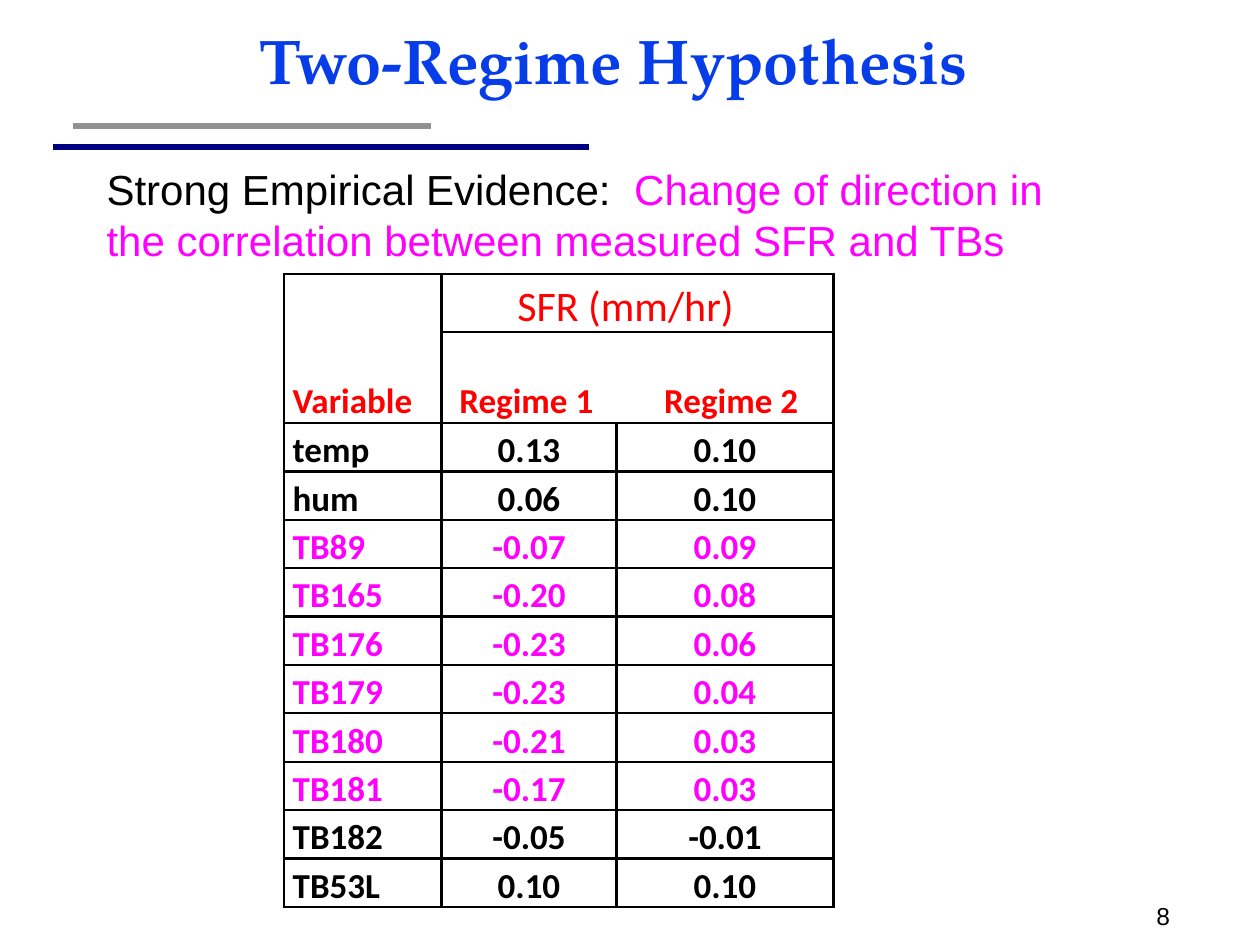
from dataclasses import dataclass

import pptx
import pptx.dml.color
import pptx.enum.shapes
import pptx.enum.text
import pptx.oxml
import pptx.oxml.ns
import pptx.util
from pptx.util import Cm, Pt

ALIGN = pptx.enum.text.PP_ALIGN
ANCHOR = pptx.enum.text.MSO_ANCHOR
NO_GRID_STYLE = "{2D5ABB26-0587-4C30-8999-92F81FD0307C}"


@dataclass
class Box:
    left: float
    top: float
    width: float
    height: float

    def lengths(self):
        return Cm(self.left), Cm(self.top), Cm(self.width), Cm(self.height)


@dataclass(frozen=True)
class Theme:
    title: str = "063DE8"
    ink: str = "000000"
    header: str = "FF0000"
    accent: str = "FF00FF"
    paper: str = "FFFFFF"
    short_rule: str = "919191"
    long_rule: str = "000080"
    title_face: str = "TeX Gyre Pagella"
    text_face: str = "Arial"
    table_face: str = "Calibri"
    title_size: int = 36
    lead_size: int = 24
    cell_size: int = 20
    number_size: int = 14
    spacer_size: int = 10
    rule_width: float = 3.5
    border_width: float = 1.5


THEME = Theme()
CORRELATIONS = [
    ("temp", "0.13", "0.10"),
    ("hum", "0.06", "0.10"),
    ("TB89", "-0.07", "0.09"),
    ("TB165", "-0.20", "0.08"),
    ("TB176", "-0.23", "0.06"),
    ("TB179", "-0.23", "0.04"),
    ("TB180", "-0.21", "0.03"),
    ("TB181", "-0.17", "0.03"),
    ("TB182", "-0.05", "-0.01"),
    ("TB53L", "0.10", "0.10"),
]
REVERSED = {"TB89", "TB165", "TB176", "TB179", "TB180", "TB181"}


def rgb(value):
    return pptx.dml.color.RGBColor.from_string(value)


def set_font(font, face, size, color=None, bold=False):
    font.name, font.size, font.bold = face, Pt(size), bold
    if color:
        font.color.rgb = rgb(color)


def add_title(slide, box):
    title = slide.shapes.title
    title.left, title.top, title.width, title.height = box.lengths()
    frame = title.text_frame
    frame.text = "Two-Regime Hypothesis"
    frame.vertical_anchor = ANCHOR.BOTTOM
    frame.auto_size = pptx.enum.text.MSO_AUTO_SIZE.NONE
    paragraph = frame.paragraphs[0]
    paragraph.alignment = ALIGN.CENTER
    paragraph.line_spacing = 0.85
    set_font(paragraph.font, THEME.title_face, THEME.title_size, THEME.title, True)


def add_title_rules(slide, box):
    rules = [
        (box.left + 0.41, box.top, 7.21, THEME.short_rule),
        (box.left, box.top + box.height, box.width, THEME.long_rule),
    ]
    for left, top, width, color in rules:
        rule = slide.shapes.add_connector(
            pptx.enum.shapes.MSO_CONNECTOR.STRAIGHT,
            Cm(left), Cm(top), Cm(left + width), Cm(top))
        rule.line.color.rgb = rgb(color)
        rule.line.width = Pt(THEME.rule_width)
        properties = rule._element.spPr
        properties.append(properties.makeelement(pptx.oxml.ns.qn("a:effectLst"), {}))


def add_evidence(slide, box):
    frame = slide.shapes.add_textbox(*box.lengths()).text_frame
    frame.word_wrap = False
    frame.auto_size = pptx.enum.text.MSO_AUTO_SIZE.SHAPE_TO_FIT_TEXT
    lines = [
        [("Strong Empirical Evidence:  ", THEME.ink), ("Change of direction in", THEME.accent)],
        [("the correlation between measured SFR and TBs", THEME.accent)],
    ]
    for index, pieces in enumerate(lines):
        paragraph = frame.add_paragraph() if index else frame.paragraphs[0]
        set_font(paragraph.font, THEME.text_face, THEME.lead_size)
        for words, color in pieces:
            run = paragraph.add_run()
            run.text = words
            run.font.color.rgb = rgb(color)


def add_borders(cell):
    properties = cell._tc.get_or_add_tcPr()
    for position, side in enumerate(("lnL", "lnR", "lnT", "lnB")):
        properties.insert(position, pptx.oxml.parse_xml(
            f'<a:{side} {pptx.oxml.ns.nsdecls("a")} w="{Pt(THEME.border_width)}">'
            f'<a:solidFill><a:srgbClr val="{THEME.ink}"/></a:solidFill></a:{side}>'))


def clear_cell(cell):
    cell.fill.background()
    cell.margin_top = cell.margin_bottom = 0
    cell.margin_left = cell.margin_right = Cm(0.18)
    cell.vertical_anchor = ANCHOR.BOTTOM
    ending = cell.text_frame.paragraphs[0]._p.get_or_add_endParaRPr()
    ending.set("sz", str(THEME.spacer_size * 100))


def write_cell(cell, words, color, align=ALIGN.LEFT, size=THEME.cell_size, bold=True):
    paragraph = cell.text_frame.paragraphs[0]
    paragraph.add_run().text = words
    paragraph.alignment = align
    paragraph.line_spacing = 1.15
    set_font(paragraph.font, THEME.table_face, size, color, bold)
    return paragraph


def add_tab_stop(paragraph, position):
    properties = paragraph._p.get_or_add_pPr()
    stops = pptx.oxml.parse_xml(
        f'<a:tabLst {pptx.oxml.ns.nsdecls("a")}><a:tab pos="{Cm(position)}" algn="l"/></a:tabLst>')
    properties.find(pptx.oxml.ns.qn("a:defRPr")).addprevious(stops)


def add_correlation_table(slide, box):
    widths = [3.18, 3.53, 4.37, 2.03, 3.81]
    heights = [0.6, 1.17, 1.83] + [0.97] * len(CORRELATIONS) + [0.71]
    frame = slide.shapes.add_table(len(heights), len(widths), *box.lengths())
    table = frame.table
    table.first_row = table.horz_banding = False
    table._tbl.tblPr.find(pptx.oxml.ns.qn("a:tableStyleId")).text = NO_GRID_STYLE
    for column, width in zip(table.columns, widths):
        column.width = Cm(width)
    for row, height in zip(table.rows, heights):
        row.height = Cm(height)
    last_row = len(heights) - 1
    for r in range(len(heights)):
        for c in range(len(widths)):
            cell = table.cell(r, c)
            clear_cell(cell)
            if 0 < r < last_row and c < 3:
                cell.fill.solid()
                cell.fill.fore_color.rgb = rgb(THEME.paper)
                add_borders(cell)
        if 0 < r < last_row:
            table.cell(r, 3).merge(table.cell(r, 4))

    variable, rate, regimes = table.cell(1, 0), table.cell(1, 1), table.cell(2, 1)
    variable.merge(table.cell(2, 0))
    rate.merge(table.cell(1, 2))
    regimes.merge(table.cell(2, 2))
    rate.margin_left, regimes.margin_left = Cm(1.53), Cm(0.36)
    write_cell(variable, "Variable", THEME.header)
    write_cell(rate, "SFR (mm/hr)", THEME.header, size=THEME.lead_size, bold=False)
    add_tab_stop(write_cell(regimes, "Regime 1\tRegime 2", THEME.header), 4.13)

    for r, (name, *values) in enumerate(CORRELATIONS, start=3):
        color = THEME.accent if name in REVERSED else THEME.ink
        write_cell(table.cell(r, 0), name, color)
        for c, value in enumerate(values, start=1):
            write_cell(table.cell(r, c), value, color, ALIGN.CENTER)


def add_page_number(slide, box):
    frame = slide.shapes.add_textbox(*box.lengths()).text_frame
    frame.word_wrap = True
    frame.text = "8"
    set_font(frame.paragraphs[0].font, THEME.text_face, THEME.number_size, THEME.ink)


def main():
    deck = pptx.Presentation()
    deck.slide_width, deck.slide_height = Cm(25.4), Cm(19.05)
    slide = deck.slides.add_slide(deck.slide_layouts[5])
    add_title_rules(slide, Box(1.07, 2.54, 10.8, 0.43))
    add_page_number(slide, Box(23.06, 18.03, 5.92, 1.02))
    add_title(slide, Box(1.47, 0.2, 21.8, 1.9))
    add_evidence(slide, Box(1.9, 3.18, 19.8, 2.3))
    add_correlation_table(slide, Box(5.72, 4.93, 16.92, 14.01))
    deck.save("out.pptx")


if __name__ == "__main__":
    main()
